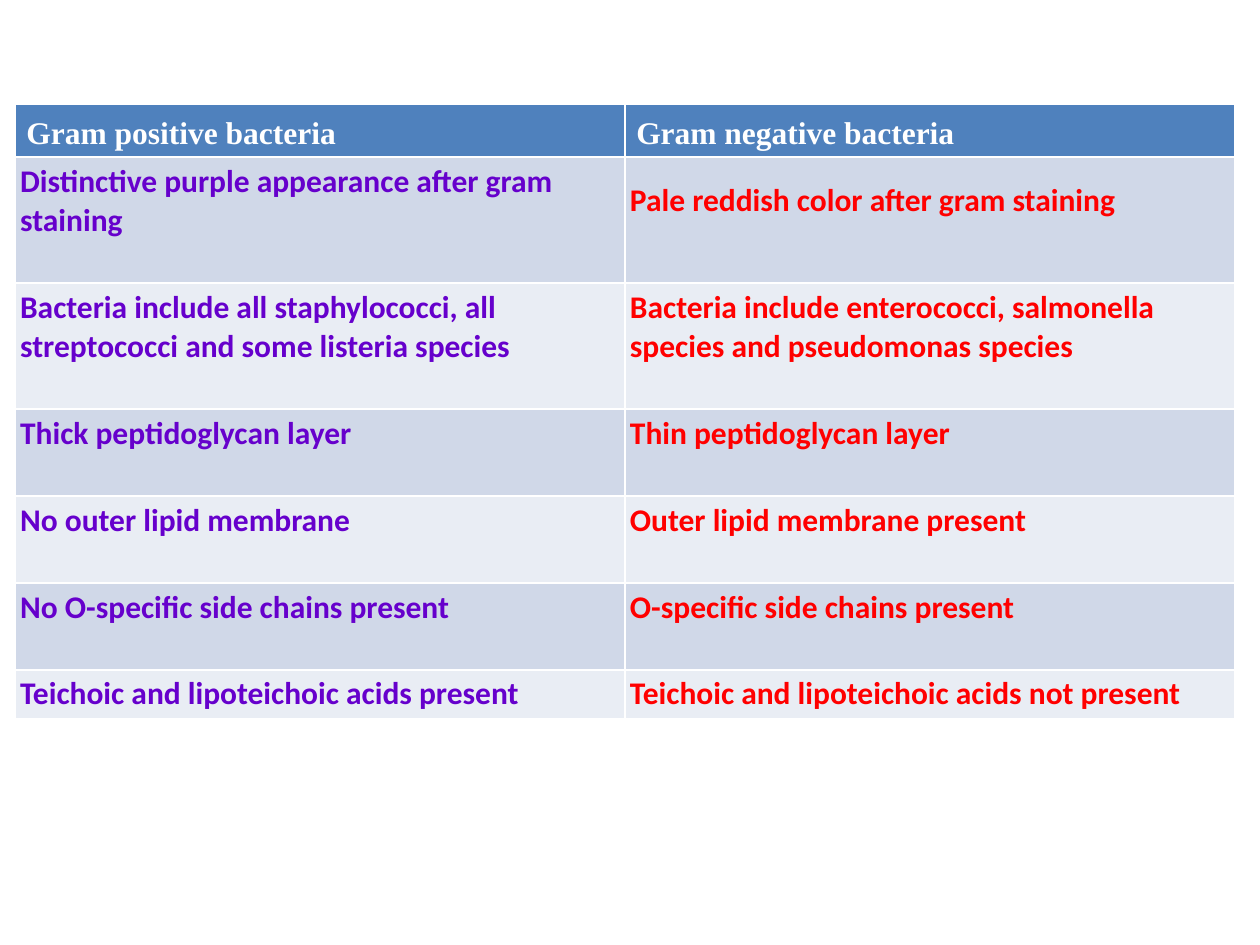
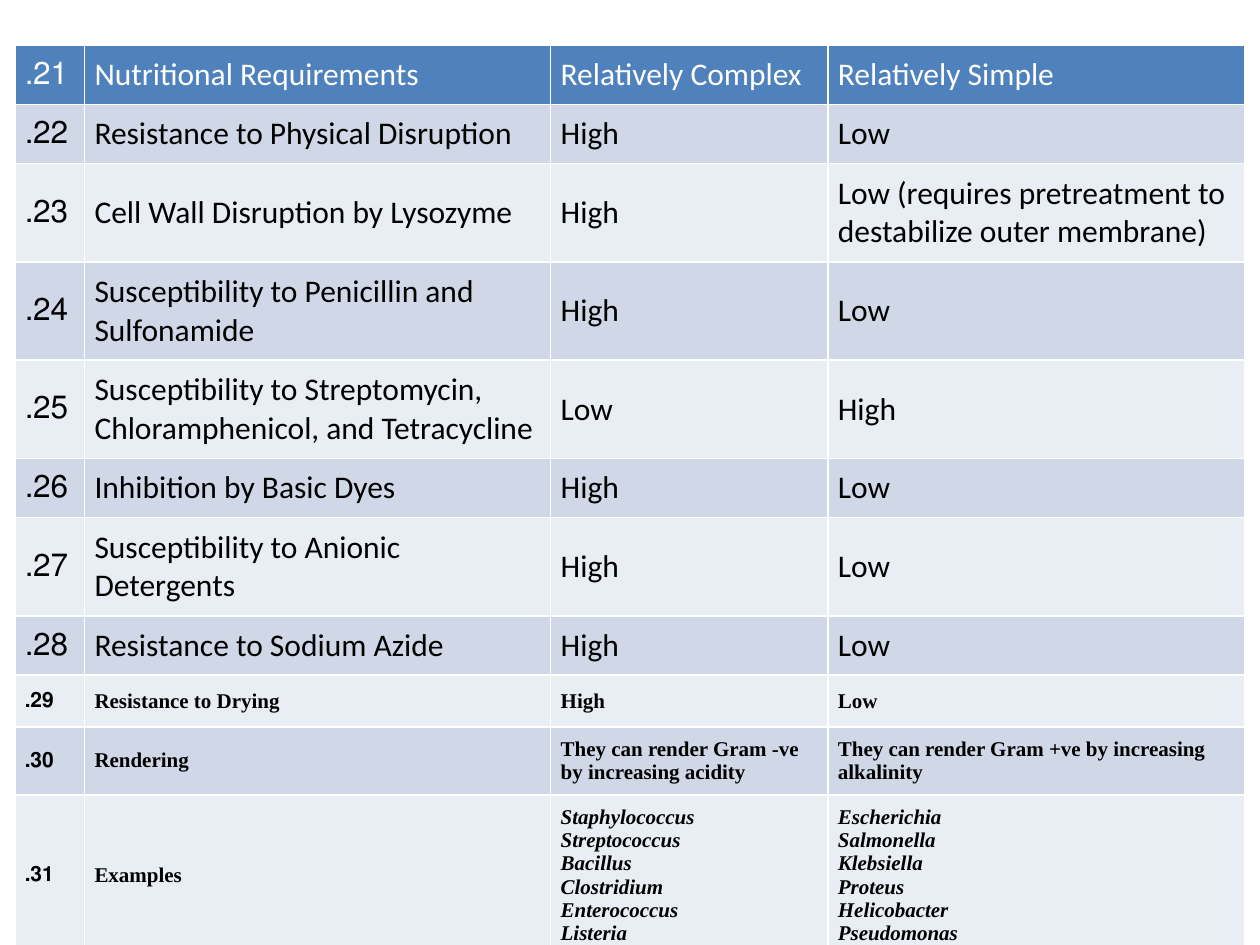
"""Build two slides of tables comparing Gram positive and Gram negative bacteria."""
from dataclasses import dataclass, replace

from pptx import Presentation
from pptx import util as u
from pptx.dml.color import RGBColor
from pptx.enum import text

WHITE = RGBColor(0xFF, 0xFF, 0xFF)
BLACK = RGBColor(0x00, 0x00, 0x00)
RED = RGBColor(0xFF, 0x00, 0x00)
PURPLE = RGBColor(0x66, 0x00, 0xCC)
HEADER_BLUE = RGBColor(0x4F, 0x81, 0xBD)
BANDS = (RGBColor(0xE9, 0xED, 0xF4), RGBColor(0xD0, 0xD8, 0xE8))
SANS, SERIF = "Calibri", "Times New Roman"
TABLE_LEFT = 0.12
BLANK_LAYOUT = 6
LINE_HEIGHT = 0.3


@dataclass(frozen=True)
class CellStyle:
    font: str
    size: int
    color: RGBColor
    bold: bool = False
    italic: bool = False
    inset: float = 0.08
    bottom_gap: float = 0
    right_to_left: bool = False


@dataclass(frozen=True)
class Row:
    height: float
    texts: tuple[str, ...]
    styles: tuple[CellStyle, ...]


def fill_cell(cell, content: str, style: CellStyle, fill: RGBColor) -> None:
    cell.fill.solid()
    cell.fill.fore_color.rgb = fill
    cell.vertical_anchor = text.MSO_ANCHOR.MIDDLE
    cell.margin_left = cell.margin_right = cell.margin_top = u.Inches(style.inset)
    cell.margin_bottom = u.Inches(style.inset + style.bottom_gap)
    paragraph = cell.text_frame.paragraphs[0]
    paragraph.alignment = text.PP_ALIGN.LEFT
    if style.right_to_left:
        paragraph._p.get_or_add_pPr().set("rtl", "1")
    for number, line in enumerate(content.split("\n")):
        if number:
            paragraph.add_line_break()
        run = paragraph.add_run()
        run.text = line
        font = run.font
        font.name, font.size = style.font, u.Pt(style.size)
        font.bold, font.italic = style.bold, style.italic
        font.color.rgb = style.color


def add_table_slide(presentation, top: float, widths: tuple[float, ...], rows: list[Row]) -> None:
    slide = presentation.slides.add_slide(presentation.slide_layouts[BLANK_LAYOUT])
    table = slide.shapes.add_table(
        len(rows), len(widths), u.Inches(TABLE_LEFT), u.Inches(top),
        u.Inches(sum(widths)), u.Inches(sum(row.height for row in rows)),
    ).table
    for column, width in zip(table.columns, widths):
        column.width = u.Inches(width)
    for index, row in enumerate(rows):
        table.rows[index].height = u.Inches(row.height)
        fill = BANDS[index % 2] if index else HEADER_BLUE
        for cell, content, style in zip(table.rows[index].cells, row.texts, row.styles):
            fill_cell(cell, content, style, fill)


def appearance_rows() -> list[Row]:
    header = CellStyle(SERIF, 18, WHITE, bold=True, inset=0.1)
    header = replace(header, inset=0.09, bottom_gap=-0.04)
    positive = CellStyle(SANS, 18, PURPLE, bold=True, inset=0.04)
    last_styles = (positive, replace(positive, color=RED))
    spaced_styles = tuple(replace(style, bottom_gap=LINE_HEIGHT) for style in last_styles)
    comparisons = [
        (1.0, "Distinctive purple appearance after gram staining",
         "Pale reddish color after gram staining"),
        (1.0, "Bacteria include all staphylococci, all streptococci and some listeria species",
         "Bacteria include enterococci, salmonella species and pseudomonas species"),
        (0.69, "Thick peptidoglycan layer", "Thin peptidoglycan layer"),
        (0.69, "No outer lipid membrane", "Outer lipid membrane present"),
        (0.69, "No O-specific side chains present", "O-specific side chains present"),
    ]
    return [
        Row(0.41, ("Gram positive bacteria", "Gram negative bacteria"), (header, header)),
        *(Row(height, tuple(texts), spaced_styles) for height, *texts in comparisons),
        Row(0.38, ("Teichoic and lipoteichoic acids present",
                   "Teichoic and lipoteichoic acids not present"), last_styles),
    ]


def property_rows() -> list[Row]:
    body = CellStyle(SANS, 18, BLACK, right_to_left=True)
    header = replace(body, color=WHITE)
    small = replace(body, font=SERIF, size=12, bold=True)
    genus = replace(small, italic=True)
    single, double = 0.47, 0.78
    properties = [
        (single, header, "Nutritional Requirements", "Relatively Complex", "Relatively Simple"),
        (single, body, "Resistance to Physical Disruption", "High", "Low"),
        (double, body, "Cell Wall Disruption by Lysozyme", "High",
         "Low (requires pretreatment to destabilize outer membrane)"),
        (double, body, "Susceptibility to Penicillin and Sulfonamide", "High", "Low"),
        (double, body, "Susceptibility to Streptomycin, Chloramphenicol, and Tetracycline",
         "Low", "High"),
        (single, body, "Inhibition by Basic Dyes", "High", "Low"),
        (double, body, "Susceptibility to Anionic Detergents", "High", "Low"),
        (single, body, "Resistance to Sodium Azide", "High", "Low"),
        (0.41, small, "Resistance to Drying", "High", "Low"),
        (0.54, small, "Rendering", "They can render Gram -ve by increasing acidity",
         "They can render Gram +ve by increasing alkalinity"),
        (1.28, genus, "Examples",
         "Staphylococcus\nStreptococcus\nBacillus\nClostridium\nEnterococcus\nListeria",
         "Escherichia\nSalmonella\nKlebsiella\nProteus\nHelicobacter\nPseudomonas"),
    ]
    rows = []
    for number, (height, style, *texts) in enumerate(properties, start=21):
        label_style = replace(style, italic=False)
        styles = (label_style, label_style, style, style)
        rows.append(Row(height, (f"{number}.", *texts), styles))
    return rows


def main() -> None:
    presentation = Presentation()
    presentation.slide_width, presentation.slide_height = u.Inches(10), u.Inches(7.5)
    add_table_slide(presentation, 0.83, (4.84, 4.84), appearance_rows())
    add_table_slide(presentation, 0.36, (0.55, 3.7, 2.2, 3.31), property_rows())
    presentation.save("out.pptx")


if __name__ == "__main__":
    main()
